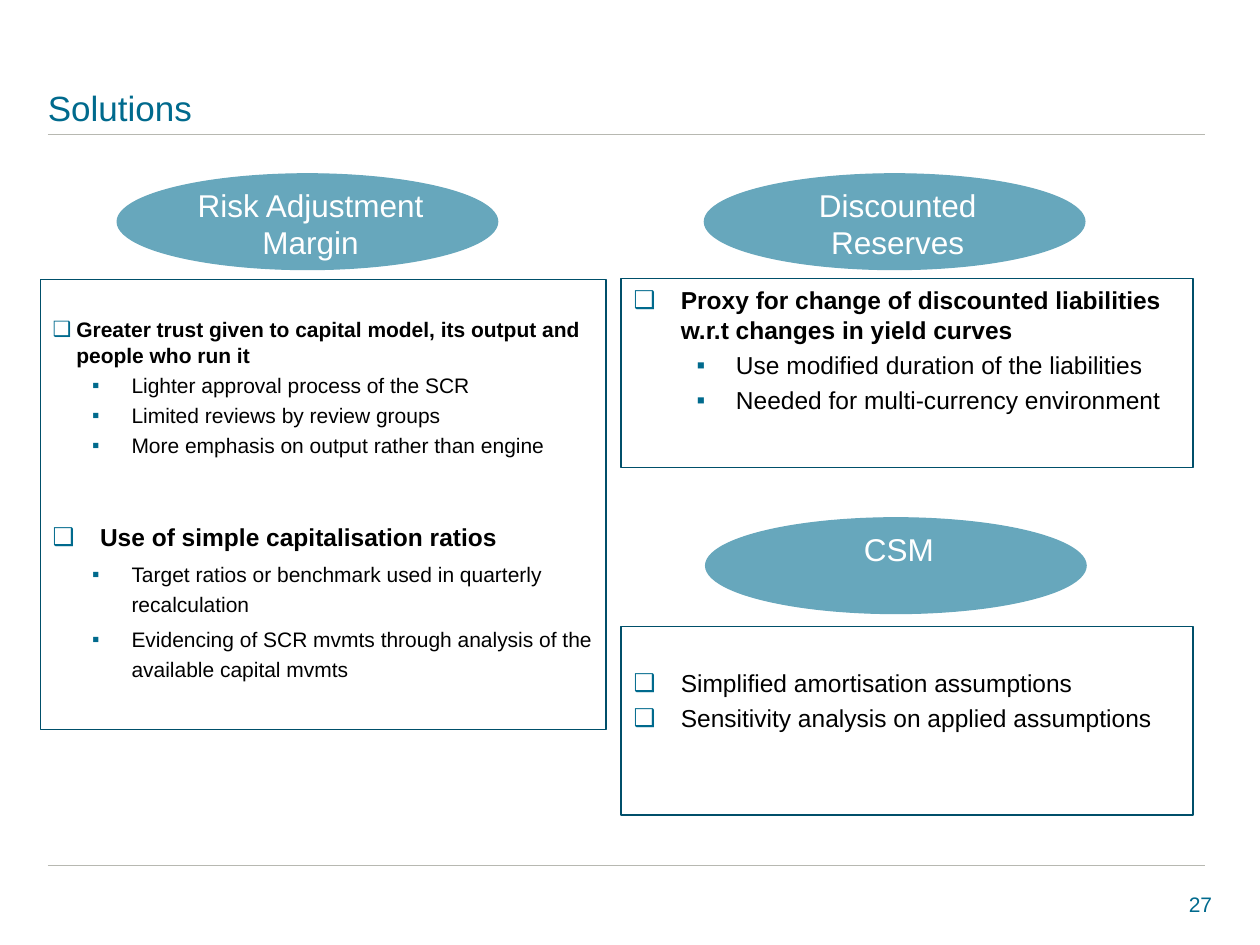
import pptx
import pptx.dml.color
import pptx.enum.shapes
import pptx.enum.text
import pptx.oxml.ns
import pptx.util
from lxml import etree

Pt = pptx.util.Pt
qn = pptx.oxml.ns.qn
ALIGN = pptx.enum.text.PP_ALIGN
ANCHOR = pptx.enum.text.MSO_ANCHOR
SHAPE = pptx.enum.shapes.MSO_SHAPE

TEAL, DARK_TEAL, LIGHT_TEAL = "006A8D", "004F6A", "67A7BC"
GREY, BLACK, WHITE = "B7B8B1", "000000", "FFFFFF"


def color(hex_string):
    return pptx.dml.color.RGBColor.from_string(hex_string)


def write(frame, text, size=12, fill=BLACK, bold=False, align=ALIGN.LEFT,
          bullet=None, left=0, hanging=0, before=0, line_spacing=None):
    """Fill the first paragraph of the frame, or add one after the others."""
    paragraph = frame.paragraphs[0]
    if paragraph.runs:
        paragraph = frame.add_paragraph()
        paragraph.space_before = Pt(before)
    paragraph.alignment = align
    if line_spacing:
        paragraph.line_spacing = line_spacing
    if bullet:
        properties = paragraph._p.get_or_add_pPr()
        properties.set("marL", str(Pt(left)))
        properties.set("indent", str(-Pt(hanging)))
        bullet_color = etree.SubElement(properties, qn("a:buClr"))
        etree.SubElement(bullet_color, qn("a:srgbClr"), val=TEAL)
        etree.SubElement(properties, qn("a:buFont"), typeface="Arial")
        etree.SubElement(properties, qn("a:buChar"), char=bullet)
    run = paragraph.add_run()
    run.text = text
    run.font.name = "Arial"
    run.font.size = Pt(size)
    run.font.bold = bold
    run.font.color.rgb = color(fill)


presentation = pptx.Presentation()
presentation.slide_width = Pt(720)
presentation.slide_height = Pt(540)
slide = presentation.slides.add_slide(presentation.slide_layouts[6])

# Rules under the title and above the footer
for y in (77.04, 494.64):
    rule = slide.shapes.add_connector(
        pptx.enum.shapes.MSO_CONNECTOR.STRAIGHT, Pt(27.36), Pt(y), Pt(688.32), Pt(y))
    rule.line.color.rgb = color(GREY)
    rule.line.width = Pt(0.75)
    etree.SubElement(rule._element.spPr, qn("a:effectLst"))

# Title
title = slide.shapes.add_textbox(Pt(27.36), Pt(21.6), Pt(664.56), Pt(55.44))
title.text_frame.word_wrap = True
title.text_frame.vertical_anchor = ANCHOR.BOTTOM
title.text_frame.margin_left = 0
write(title.text_frame, "Solutions", size=20, fill=TEAL)

# Slide number
number = slide.shapes.add_textbox(Pt(535.68), Pt(506.16), Pt(156.96), Pt(21.6))
number.text_frame.word_wrap = True
number.text_frame.margin_right = 0
write(number.text_frame, "27", fill=TEAL, align=ALIGN.RIGHT)

# Headings on ellipses
headings = [
    ("Risk Adjustment Margin", 66.96, 99.36, 42.48),
    ("Discounted Reserves", 402.48, 99.36, 42.48),
    ("CSM", 403.2, 295.92, 28.8),
]
for text, x, y, text_height in headings:
    group = slide.shapes.add_group_shape()
    ellipse = group.shapes.add_shape(SHAPE.OVAL, Pt(x), Pt(y), Pt(217.44), Pt(54.72))
    ellipse.shadow.inherit = False
    ellipse.fill.solid()
    ellipse.fill.fore_color.rgb = color(LIGHT_TEAL)
    ellipse.line.color.rgb = color(LIGHT_TEAL)
    ellipse.line.width = Pt(0.75)
    label = group.shapes.add_textbox(Pt(x + 25.2), Pt(y + 3.2), Pt(170.64), Pt(text_height))
    label.text_frame.word_wrap = True
    write(label.text_frame, text, size=18, fill=WHITE, align=ALIGN.CENTER)

# Bullet formats
point = dict(size=14, bullet="❑", left=27, hanging=27, before=3.3)
bold_point = dict(point, bold=True)
small_point = dict(bold_point, size=12, left=13.5, hanging=13.5)
late_point = dict(bold_point, before=36.7)
wide_item = dict(size=14, bullet="▪", left=58.5, hanging=22.5, before=3.3)
item = dict(size=12, bullet="▪", left=45, hanging=22.5, before=2.8)
loose_item = dict(item, line_spacing=1.2)

# Framed boxes: left, top, width, height, top margin, paragraphs
boxes = [
    (23.04, 159.84, 323.28, 257.04, 21.3, [
        ("Greater trust given to capital model, its output and people who run it", small_point),
        ("Lighter approval process of the SCR", item),
        ("Limited reviews by review groups", item),
        ("More emphasis on output rather than engine", item),
        ("Use of simple capitalisation ratios", late_point),
        ("Target ratios or benchmark used in quarterly recalculation", loose_item),
        ("Evidencing of SCR mvmts through analysis of the available capital mvmts", loose_item),
    ]),
    (354.96, 159.12, 326.88, 108, 4, [
        ("Proxy for change of discounted liabilities w.r.t changes in yield curves", bold_point),
        ("Use modified duration of the liabilities", wide_item),
        ("Needed for multi-currency environment", wide_item),
    ]),
    (354.96, 357.84, 326.88, 108, 23.8, [
        ("Simplified amortisation assumptions", point),
        ("Sensitivity analysis on applied assumptions", point),
    ]),
]
for x, y, width, height, top_margin, paragraphs in boxes:
    box = slide.shapes.add_shape(SHAPE.RECTANGLE, Pt(x), Pt(y), Pt(width), Pt(height))
    box.shadow.inherit = False
    box.fill.background()
    box.line.color.rgb = color(DARK_TEAL)
    box.line.width = Pt(0.75)
    frame = box.text_frame
    frame.word_wrap = True
    frame.vertical_anchor = ANCHOR.TOP
    frame.margin_top = Pt(top_margin)
    for text, text_format in paragraphs:
        write(frame, text, **text_format)

presentation.save("out.pptx")
